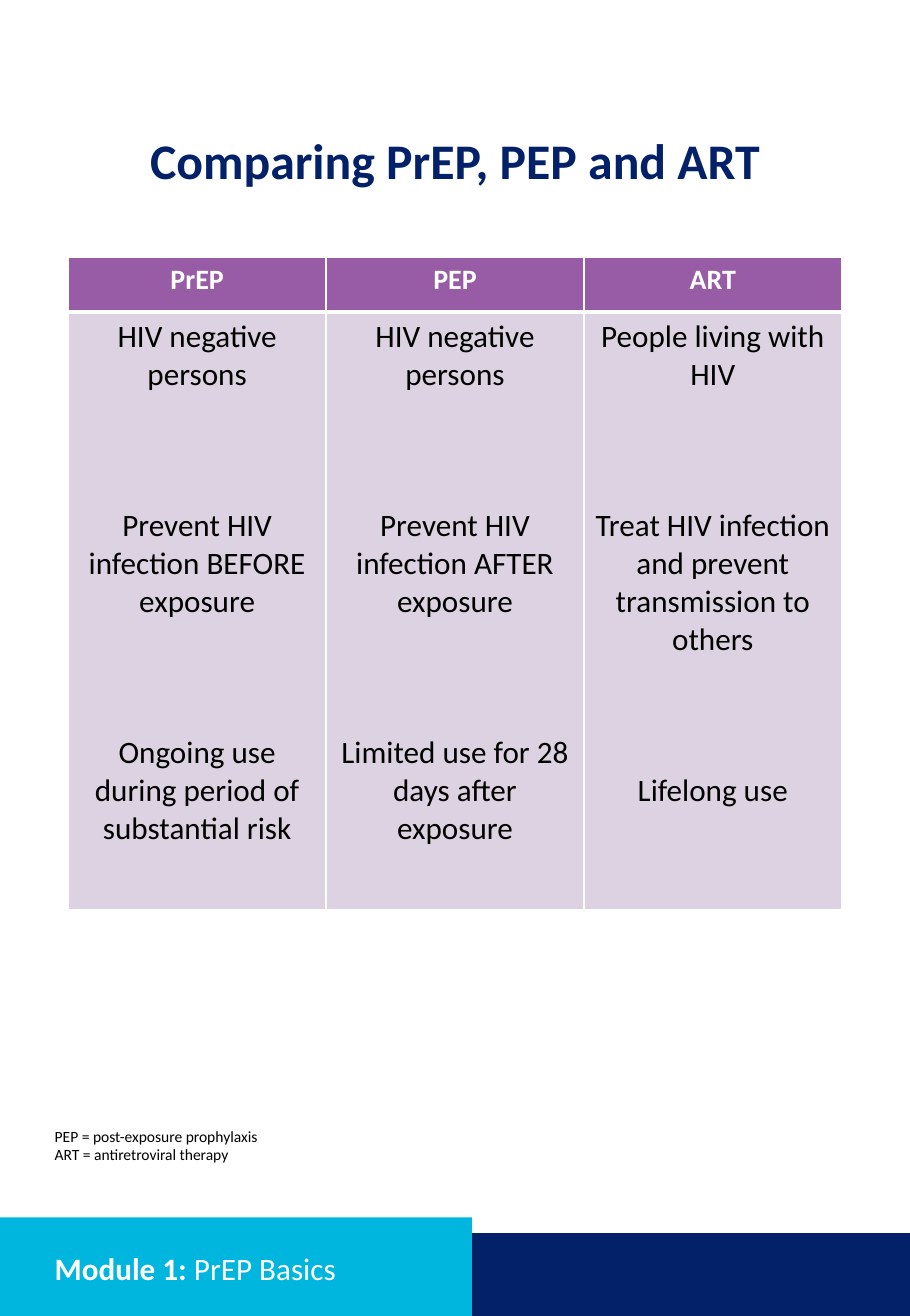
from lxml.etree import SubElement as Sub
from pptx import Presentation
from pptx.dml.color import RGBColor
from pptx.enum.shapes import MSO_SHAPE as Kind
from pptx.enum.text import MSO_ANCHOR as Anchor, PP_ALIGN as Align
from pptx.oxml.ns import qn
from pptx.util import Inches, Pt

TITLE = "Comparing PrEP, PEP and ART"
HEADS = ["PrEP", "PEP", "ART"]
CELLS = [
    ["HIV negative persons",
     "Prevent HIV infection BEFORE exposure",
     "Ongoing use during period of substantial risk"],
    ["HIV negative persons",
     "Prevent HIV infection AFTER exposure",
     "Limited use for 28 days after exposure"],
    ["People living with HIV",
     "Treat HIV infection and prevent transmission to others",
     "Lifelong use"],
]
NOTES = ["PEP = post-exposure prophylaxis", "ART = antiretroviral therapy"]
MODULE = [("Module 1: ", True), ("PrEP Basics", False)]

NAVY, CYAN, PURPLE, LILAC = "022169", "00B5DE", "975CA5", "DDD2E1"
WHITE, BLACK = "FFFFFF", "000000"

# Places are left, top, width, height in percent of the slide
WIDE, HIGH = Inches(65 / 8), Inches(47 / 4)
SPLIT = 51.85
BANDS = [((SPLIT, 93.7, 100 - SPLIT, 6.3), NAVY),
         ((0, 92.5, SPLIT, 7.5), CYAN)]
TABLE = (7.5, 19.57, 85, 49.53)
HEAD = 4.17
TITLE_AT = (7.6, 9.96, 84.9, 4.26)
NOTES_AT = (4.8, 85.2, 43.2, 3.74)
MODULE_AT = (4.8, 94.64, 43.3, 3.83)


def place(at):
    return [int(part * side / 100) for part, side in zip(at, (WIDE, HIGH) * 2)]


def paint(fill, color):
    fill.solid()
    fill.fore_color.rgb = RGBColor.from_string(color)


def write(frame, lines, size, color, bold=False, align=Align.LEFT,
          before=0, after=0, pitch=None, anchor=Anchor.TOP):
    """Write one paragraph per line; a line is text or a list of (text, bold)."""
    frame.word_wrap = True
    frame.vertical_anchor = anchor
    for i, line in enumerate(lines):
        para = frame.paragraphs[0] if i == 0 else frame.add_paragraph()
        para.alignment = align
        if i and before:
            para.space_before = Pt(before)
        if after:
            para.space_after = Pt(after)
        if pitch:
            para.line_spacing = pitch
        for text, heavy in [(line, bold)] if isinstance(line, str) else line:
            run = para.add_run()
            run.text = text
            font = run.font
            font.name, font.size, font.bold = "Calibri", Pt(size), heavy
            font.color.rgb = RGBColor.from_string(color)


def edge(cell, **widths):
    """Draw white cell borders; widths are points by side: L, R, T, B."""
    props = cell._tc.get_or_add_tcPr()
    for i, (side, width) in enumerate(widths.items()):
        line = Sub(props, qn("a:ln" + side), w=str(Pt(width)))
        Sub(Sub(line, qn("a:solidFill")), qn("a:srgbClr"), val=WHITE)
        props.insert(i, line)


def add_text(slide, at, lines, size, color, **style):
    write(slide.shapes.add_textbox(*place(at)).text_frame,
          lines, size, color, **style)


def add_bands(slide):
    for at, color in BANDS:
        band = slide.shapes.add_shape(Kind.RECTANGLE, *place(at))
        band.shadow.inherit = False
        band.line.fill.background()
        paint(band.fill, color)


def add_grid(slide):
    grid = slide.shapes.add_table(2, len(HEADS), *place(TABLE)).table
    for row, part in zip(grid.rows, (HEAD, TABLE[3] - HEAD)):
        row.height = int(HIGH * part / 100)
    for col, (head, lines) in enumerate(zip(HEADS, CELLS)):
        top, body = grid.cell(0, col), grid.cell(1, col)
        paint(top.fill, PURPLE)
        paint(body.fill, LILAC)
        edge(top, L=1, R=1, T=1, B=3)
        edge(body, L=1, R=1, T=3, B=1)
        write(top.text_frame, [head], 18, WHITE, bold=True, align=Align.CENTER)
        write(body.text_frame, lines, 20, BLACK, align=Align.CENTER,
              before=60.5, after=12)


def main():
    deck = Presentation()
    deck.slide_width, deck.slide_height = WIDE, HIGH
    slide = deck.slides.add_slide(deck.slide_layouts[6])
    paint(slide.background.fill, WHITE)
    add_bands(slide)
    add_grid(slide)
    add_text(slide, TITLE_AT, [TITLE], 32, NAVY, bold=True,
             align=Align.CENTER, pitch=0.9)
    add_text(slide, NOTES_AT, NOTES, 10, BLACK)
    add_text(slide, MODULE_AT, [MODULE], 20, WHITE, pitch=0.9,
             anchor=Anchor.MIDDLE)
    deck.save("out.pptx")


if __name__ == "__main__":
    main()
